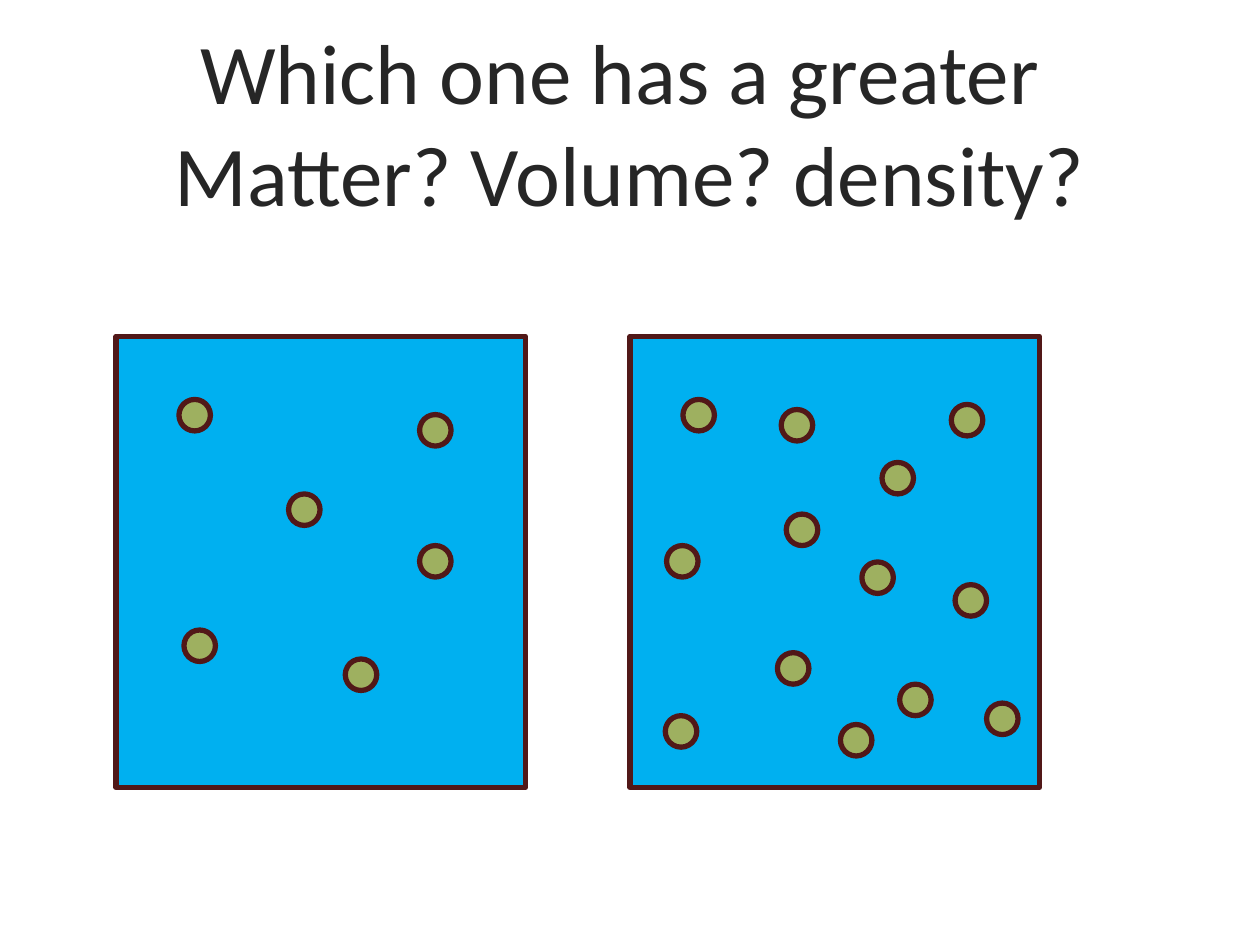
"""Build a slide that compares the density of two boxes of dots."""
import dataclasses

import pptx
import pptx.dml.color
import pptx.enum.shapes
import pptx.enum.text
import pptx.util

SCALE = 9144
COLORS = {"box": "00B0F0", "dot": "9EB060", "edge": "511818", "text": "262626"}
KINDS = pptx.enum.shapes.MSO_SHAPE
TOP, WIDE, HIGH, SIZE = 267, 325, 358, 25


@dataclasses.dataclass
class Box:
    left: int
    dots: list[tuple[int, int]]


BOXES = [
    Box(92, [(142, 317), (146, 500), (229, 392), (333, 433), (333, 329), (274, 523)]),
    Box(500, [
        (667, 575), (783, 558), (620, 325), (755, 321), (684, 446), (528, 568), (714, 543),
        (758, 464), (624, 408), (617, 518), (529, 433), (700, 367), (542, 317),
    ]),
]


def px(size: int) -> pptx.util.Emu:
    return pptx.util.Emu(size * SCALE)


def color(name: str) -> pptx.dml.color.RGBColor:
    return pptx.dml.color.RGBColor.from_string(COLORS[name])


def draw(slide, kind, left: int, top: int, wide: int, high: int, fill: str) -> None:
    shape = slide.shapes.add_shape(kind, px(left), px(top), px(wide), px(high))
    shape.shadow.inherit = False
    shape.fill.solid()
    shape.fill.fore_color.rgb = color(fill)
    shape.line.color.rgb = color("edge")
    shape.line.width = pptx.util.Pt(3)


def draw_box(slide, box: Box) -> None:
    draw(slide, KINDS.RECTANGLE, box.left, TOP, WIDE, HIGH, "box")
    for left, top in box.dots:
        draw(slide, KINDS.FLOWCHART_CONNECTOR, left, top, SIZE, SIZE, "dot")


def set_title(slide, text: str) -> None:
    title = slide.shapes.title
    title.left, title.top, title.width, title.height = map(px, (79, 34, 841, 125))
    frame = title.text_frame
    frame.text = text
    frame.word_wrap = True
    frame.auto_size = pptx.enum.text.MSO_AUTO_SIZE.NONE
    frame.vertical_anchor = pptx.enum.text.MSO_ANCHOR.MIDDLE
    for line in frame.paragraphs:
        line.alignment = pptx.enum.text.PP_ALIGN.CENTER
        for run in line.runs:
            run.font.name = "Calibri"
            run.font.size = pptx.util.Pt(48.6)
            run.font.color.rgb = color("text")


def main() -> None:
    deck = pptx.Presentation()
    deck.slide_width, deck.slide_height = px(1000), px(750)
    slide = deck.slides.add_slide(deck.slide_layouts[5])
    set_title(slide, "Which one has a greater \vMatter? Volume? density?")
    for box in BOXES:
        draw_box(slide, box)
    deck.save("out.pptx")


if __name__ == "__main__":
    main()
